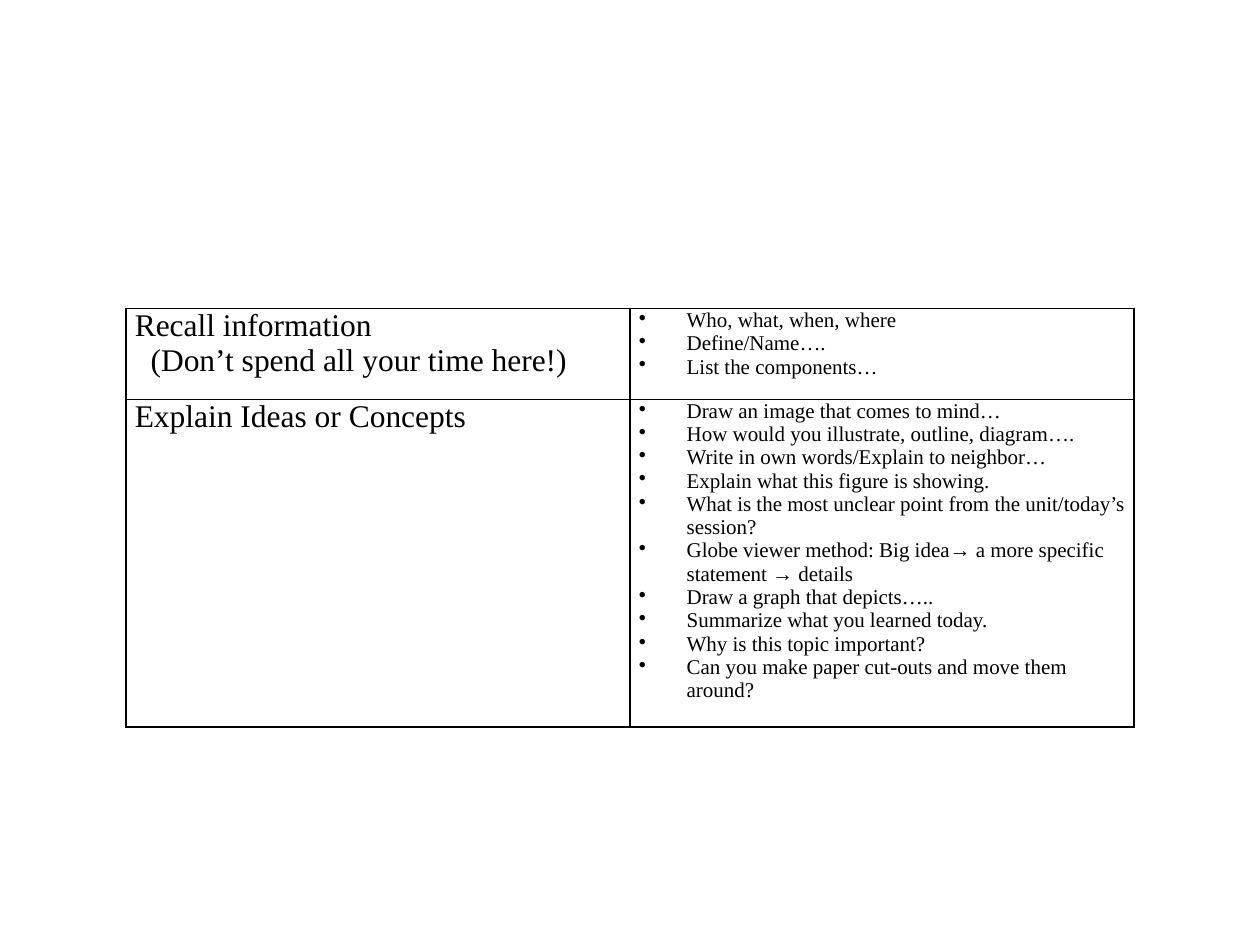
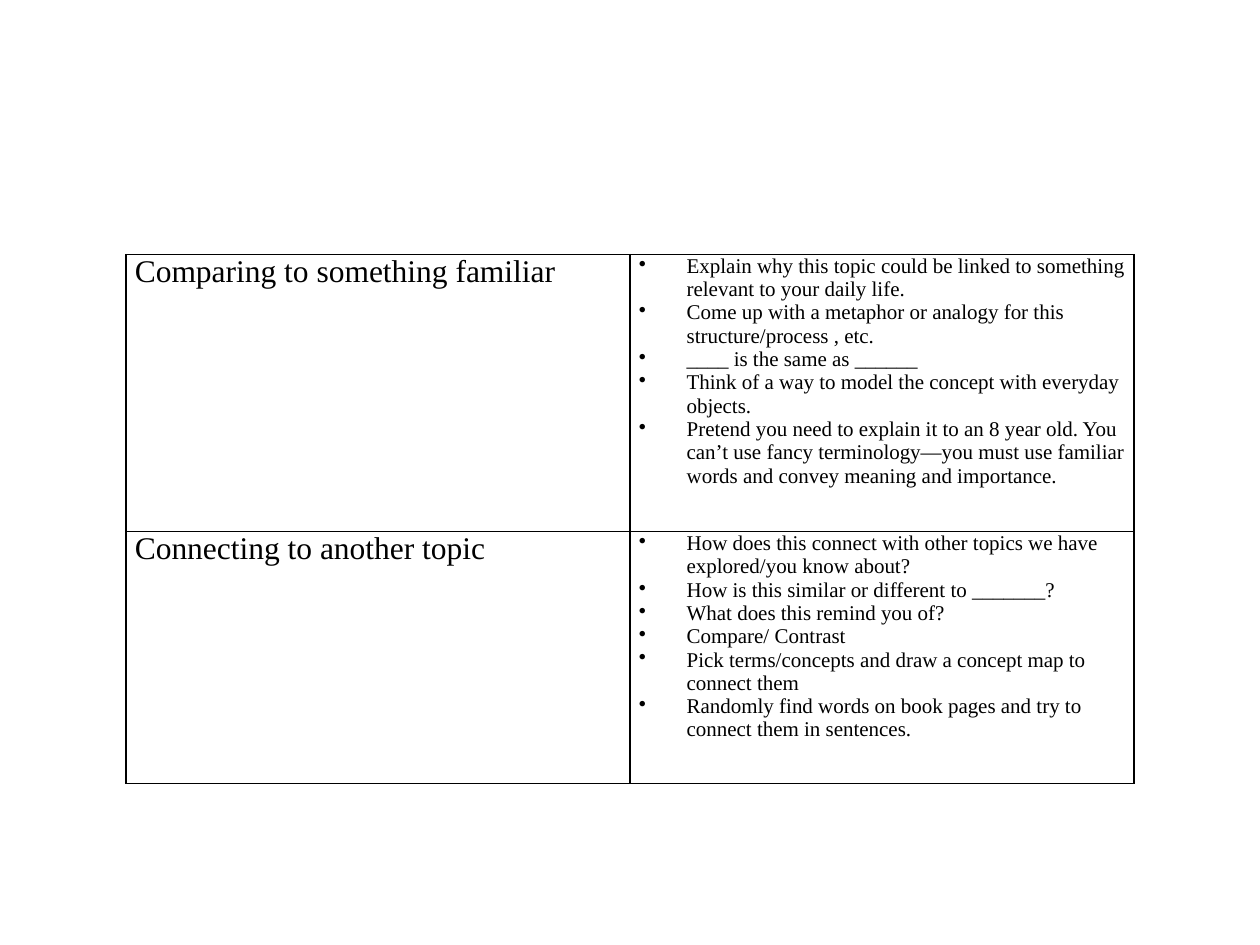
from lxml.etree import SubElement
from pptx import Presentation
from pptx.dml.color import RGBColor
from pptx.oxml import parse_xml
from pptx.oxml.ns import nsdecls, qn
from pptx.util import Inches, Pt

BLACK = RGBColor(0x00, 0x00, 0x00)
FONT = "Times New Roman"
SLIDE_W, SLIDE_H = Inches(10), Inches(7.5)
TABLE_LEFT, TABLE_W = 0.1, 0.8  # shares of the slide width
HANG = Inches(0.38)
NOTE_INDENT = Inches(0.125)

RECALL_AND_EXPLAIN = [
    (["Recall information", "(Don’t spend all your time here!)"],
     ["Who, what, when, where",
      "Define/Name….",
      "List the components…"]),
    (["Explain Ideas or Concepts"],
     ["Draw an image that comes to mind…",
      "How would you illustrate, outline, diagram….",
      "Write in own words/Explain to neighbor…",
      "Explain what this figure is showing.",
      "What is the most unclear point from the unit/today’s session?",
      "Globe viewer method: Big idea→ a more specific statement → details",
      "Draw a graph that depicts…..",
      "Summarize what you learned today.",
      "Why is this topic important?",
      "Can you make paper cut-outs and move them around?"]),
]

COMPARE_AND_CONNECT = [
    (["Comparing to something familiar"],
     ["Explain why this topic could be linked to something relevant to your "
      "daily life.",
      "Come up with a metaphor or analogy for this structure/process , etc.",
      "____ is the same as ______",
      "Think of a way to model the concept with everyday objects.",
      "Pretend you need to explain it to an 8 year old. You can’t use fancy "
      "terminology—you must use familiar words and convey meaning and "
      "importance."]),
    (["Connecting to another topic"],
     ["How does this connect with other topics we have explored/you know about?",
      "How is this similar or different to _______?",
      "What does this remind you of?",
      "Compare/ Contrast",
      "Pick terms/concepts and draw a concept map to connect them",
      "Randomly find words on book pages and try to connect them in sentences."]),
]


def add_text(p, text, size, indent=0, bullet=False):
    pPr = p._p.get_or_add_pPr()
    pPr.set("marL", str(int(indent)))
    pPr.set("indent", str(-int(indent) if bullet else 0))
    if bullet:
        SubElement(pPr, qn("a:buChar")).set("char", "•")
    r = p.add_run()
    r.text = text
    r.font.size = Pt(size)
    r.font.name = FONT
    r.font.color.rgb = BLACK


def format_cell(cell):
    cell.margin_left = cell.margin_right = Inches(0.07)
    cell.margin_top = cell.margin_bottom = 0
    cell.fill.background()
    tcPr = cell._tc.get_or_add_tcPr()
    for i, side in enumerate("LRTB"):
        tcPr.insert(i, parse_xml(
            f'<a:ln{side} {nsdecls("a")} w="{Pt(1)}"><a:solidFill>'
            f'<a:srgbClr val="{BLACK}"/></a:solidFill></a:ln{side}>'))


def fill_cell(cell, lines, size, bullet=False):
    format_cell(cell)
    tf = cell.text_frame
    for i, line in enumerate(lines):
        p = tf.paragraphs[0] if i == 0 else tf.add_paragraph()
        indent = HANG if bullet else NOTE_INDENT if i else 0
        add_text(p, line, size, indent=indent, bullet=bullet)


def add_prompt_table(s, box, row_heights, strategies):
    """Put each strategy on the left and its prompts on the right."""
    table = s.shapes.add_table(len(strategies), 2, *box).table
    table.first_row = table.horz_banding = False
    for column in table.columns:
        column.width = box[2] // 2
    for row, height, (strategy, prompts) in zip(table.rows, row_heights, strategies):
        row.height = height
        fill_cell(row.cells[0], strategy, 18)
        fill_cell(row.cells[1], prompts, 12, bullet=True)


def add_strategy_slide(prs, top, row_heights, strategies):
    s = prs.slides.add_slide(prs.slide_layouts[6])
    heights = [Inches(h) for h in row_heights]
    box = (int(SLIDE_W * TABLE_LEFT), Inches(top),
           int(SLIDE_W * TABLE_W), sum(heights))
    add_prompt_table(s, box, heights, strategies)


def main():
    prs = Presentation()
    prs.slide_width, prs.slide_height = SLIDE_W, SLIDE_H
    add_strategy_slide(prs, 2.45, (0.72, 2.6), RECALL_AND_EXPLAIN)
    add_strategy_slide(prs, 2.02, (2.2, 2), COMPARE_AND_CONNECT)
    prs.save("out.pptx")


if __name__ == "__main__":
    main()
